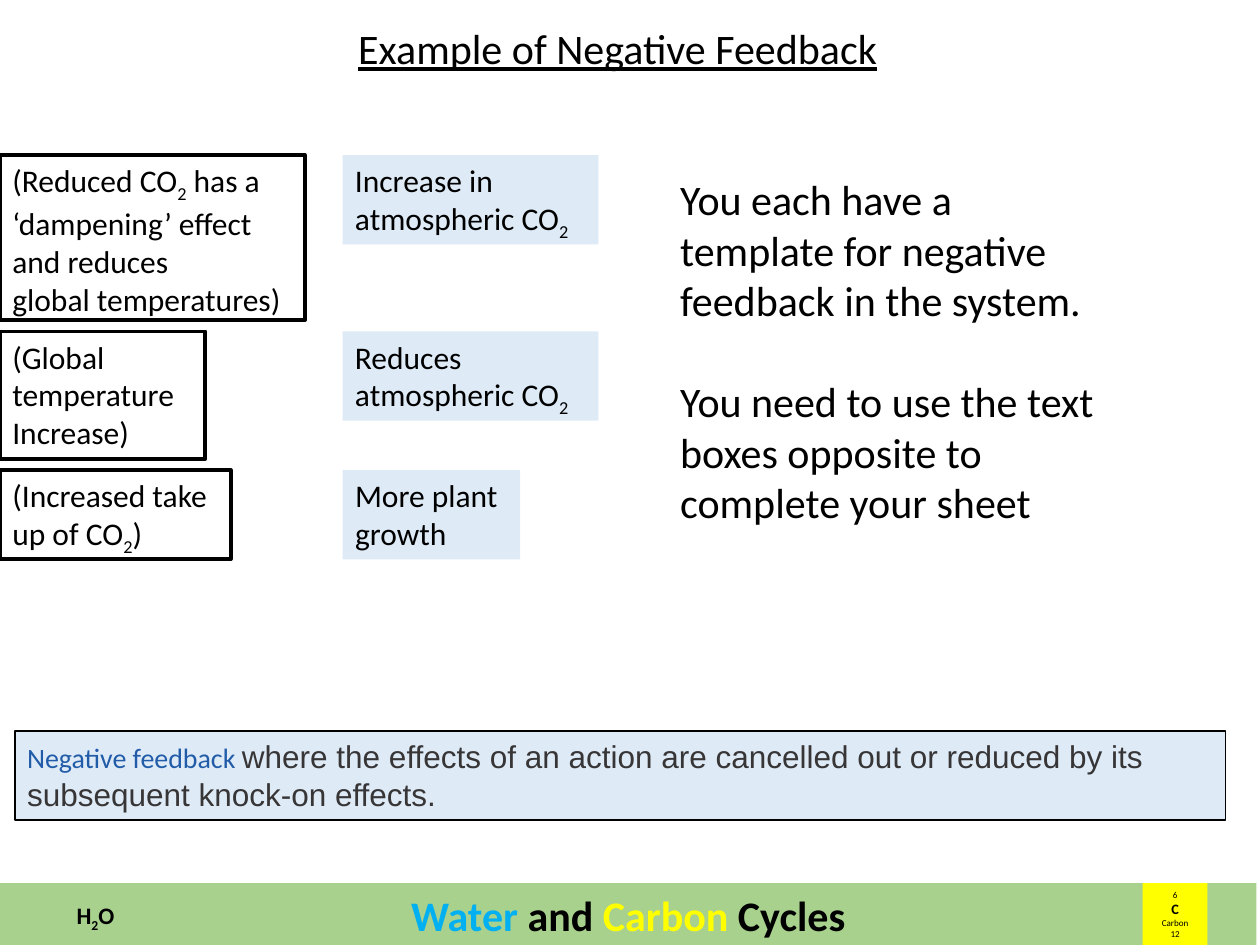
"""Builds the negative feedback slide of a lesson on the water and carbon cycles."""
import dataclasses

import pptx
import pptx.dml.color
import pptx.enum.shapes
import pptx.enum.text
import pptx.util

Pt = pptx.util.Pt
ALIGN = pptx.enum.text.PP_ALIGN


@dataclasses.dataclass(frozen=True)
class Theme:
    black: str = "000000"
    white: str = "FFFFFF"
    pale_blue: str = "DEEBF7"
    green: str = "A9D18E"
    yellow: str = "FFFF00"
    water: str = "00B0F0"
    term: str = "225CA8"
    definition: str = "373536"
    font: str = "Calibri"
    definition_font: str = "Arial"
    heading: float = 24
    body: float = 18
    term_size: float = 16
    formula: float = 13.5
    symbol: float = 8.2
    tiny: float = 5.2


@dataclasses.dataclass(frozen=True)
class Span:
    text: str
    color: str = Theme.black
    size: float = 0
    font: str = Theme.font
    bold: bool = False
    underline: bool = False
    subscript: bool = False


TWO = Span("2", subscript=True)


class SlideBuilder:
    def __init__(self, slide, theme):
        self.slide = slide
        self.theme = theme

    def fill_text(self, shape, lines, size, align=ALIGN.LEFT, gap=0, wrap=True):
        frame = shape.text_frame
        frame.word_wrap = wrap
        for index, line in enumerate(lines):
            paragraph = frame.add_paragraph() if index else frame.paragraphs[0]
            paragraph.alignment = align
            if index and gap:
                paragraph.space_before = Pt(gap)
            for span in [line] if isinstance(line, (str, Span)) else line:
                self.add_span(paragraph, Span(span) if isinstance(span, str) else span, size)

    def add_span(self, paragraph, span, size):
        run = paragraph.add_run()
        run.text = span.text
        font = run.font
        font.name = span.font
        font.size = Pt(span.size or size)
        font.bold = span.bold
        font.underline = span.underline
        font.color.rgb = pptx.dml.color.RGBColor.from_string(span.color)
        if span.subscript:
            run._r.get_or_add_rPr().set("baseline", "-25000")

    def text(self, bounds, lines, size, **options):
        box = self.slide.shapes.add_textbox(*map(Pt, bounds))
        self.fill_text(box, lines, size, **options)

    def box(self, bounds, fill, lines, size, border=0, anchor=pptx.enum.text.MSO_ANCHOR.TOP, **options):
        shape = self.slide.shapes.add_shape(
            pptx.enum.shapes.MSO_SHAPE.RECTANGLE, *map(Pt, bounds))
        shape.shadow.inherit = False
        shape.fill.solid()
        shape.fill.fore_color.rgb = pptx.dml.color.RGBColor.from_string(fill)
        if border:
            shape.line.width = Pt(border)
            shape.line.color.rgb = pptx.dml.color.RGBColor.from_string(self.theme.black)
        else:
            shape.line.fill.background()
        shape.text_frame.vertical_anchor = anchor
        self.fill_text(shape, lines, size, **options)

    def footer(self):
        theme = self.theme
        top, height = 504.7, 36
        centred = {"align": ALIGN.CENTER, "anchor": pptx.enum.text.MSO_ANCHOR.MIDDLE}
        words = [("Water", theme.water), (" and ", theme.black),
                 ("Carbon", theme.yellow), (" Cycles", theme.black)]
        self.box((0, top, 718, height), theme.green,
                 [[Span(word, color, bold=True) for word, color in words]],
                 theme.heading, **centred)
        self.box((653, top, 37, height), theme.yellow,
                 ["6", Span("C", size=theme.symbol, bold=True), "Carbon", "12"],
                 theme.tiny, **centred)
        water = [Span("H", bold=True), dataclasses.replace(TWO, bold=True), Span("O", bold=True)]
        self.text((36.7, 511.2, 37.5, 23.8), [water], theme.formula)

    def stages(self):
        theme = self.theme
        rows = [
            (88.6,
             (174.2, 94.3, [["(Reduced CO", TWO, " has a"], "‘dampening’ effect",
                            "and reduces", "global temperatures)"]),
             (146.2, 51, ["Increase in", ["atmospheric CO", TWO]])),
            (189.4,
             (117.4, 72.7, ["(Global temperature", "Increase)"]),
             (146.2, 51, ["Reduces", ["atmospheric CO", TWO]])),
            (268.6,
             (131.8, 51, ["(Increased take", ["up of CO", TWO, ")"]]),
             (101.5, 51, ["More plant", "growth"])),
        ]
        for top, (width, height, effect), (change_width, change_height, change) in rows:
            self.box((0, top, width, height), theme.white, effect, theme.body, border=2.25)
            self.box((195.8, top, change_width, change_height), theme.pale_blue, change, theme.body)


def main():
    theme = Theme()
    presentation = pptx.Presentation()
    presentation.slide_width, presentation.slide_height = Pt(720), Pt(540)
    builder = SlideBuilder(presentation.slides.add_slide(presentation.slide_layouts[6]), theme)
    builder.footer()
    builder.text((197.6, 9.4, 314, 36), [Span("Example of Negative Feedback", underline=True)],
                 theme.heading, wrap=False)
    builder.stages()
    builder.box((8.4, 417.6, 692, 51), theme.pale_blue,
                [[Span("Negative feedback ", theme.term, theme.term_size),
                  Span("where the effects of an action are cancelled out or reduced by its "
                       "subsequent knock-on effects.", theme.definition, font=theme.definition_font)]],
                theme.body, border=1)
    builder.text((381.6, 95.8, 260.6, 211),
                 ["You each have a template for negative feedback in the system.",
                  "You need to use the text boxes opposite to complete your sheet"],
                 theme.heading, gap=29)
    presentation.save("out.pptx")


if __name__ == "__main__":
    main()
